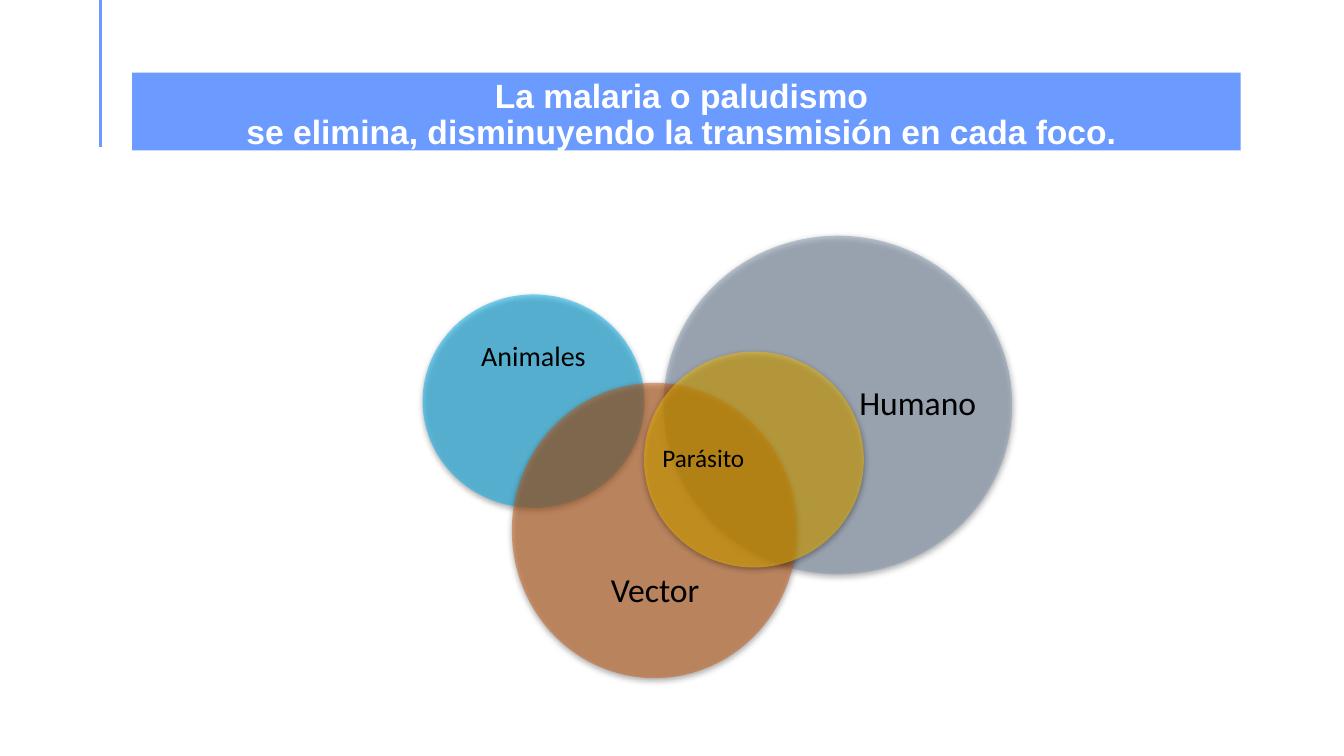
"""Build a slide with overlapping circles on malaria transmission."""
from lxml import etree
from pptx import Presentation
from pptx import util as u
from pptx.dml.color import RGBColor
from pptx.enum import shapes, text
from pptx.oxml.ns import qn

HUES = {"band": "6B9BFF", "white": "FFFFFF", "black": "000000", "sky": "00B0F0",
        "slate": "8497B0", "rust": "C55A11", "gold": "FFC000"}


def label(box, lines, size, font, hue, bold=False):
    """Add a centred text box whose lines share one paragraph."""
    frame = slide.shapes.add_textbox(*map(u.Cm, box)).text_frame
    frame.word_wrap = True
    frame.vertical_anchor = text.MSO_ANCHOR.MIDDLE
    para = frame.paragraphs[0]
    para.text = "\v".join(lines)
    para.alignment = text.PP_ALIGN.CENTER
    para.line_spacing = 0.9
    para.font.size = u.Pt(size)
    para.font.name = font
    para.font.bold = bold
    para.font.color.rgb = RGBColor.from_string(HUES[hue])
    return frame


def solid(shape, hue):
    """Fill a shape with one colour, without line or shadow."""
    shape.fill.solid()
    shape.fill.fore_color.rgb = RGBColor.from_string(HUES[hue])
    shape.line.fill.background()
    shape.shadow.inherit = False


deck = Presentation()
deck.slide_width, deck.slide_height = u.Cm(33.87), u.Cm(19.05)
slide = deck.slides.add_slide(deck.slide_layouts[6])
kinds = shapes.MSO_SHAPE

band = slide.shapes.add_shape(kinds.RECTANGLE, *map(u.Cm, (3.33, 1.83, 27.94, 1.96)))
solid(band, "band")

rule = slide.shapes.add_connector(
    shapes.MSO_CONNECTOR.STRAIGHT, *map(u.Cm, (2.54, 0, 2.54, 3.71)))
rule.line.color.rgb = RGBColor.from_string(HUES["band"])
rule.line.width = u.Pt(2.25)
etree.SubElement(rule._element.spPr, qn("a:effectLst"))

circles = [
    ("Animales", 20, "sky", kinds.OVAL, (10.65, 7.42, 5.59, 5.38), (11.3, 8.15, 4.29, 1.7)),
    ("Humano", 24, "slate", kinds.OVAL, (16.72, 5.94, 8.79, 8.53), (21.44, 6.93, 3.38, 6.55)),
    ("Vector", 24, "rust", kinds.FLOWCHART_OR, (12.9, 9.65, 7.19, 7.44),
     (13.74, 13.74, 5.54, 2.36)),
    ("Parásito", 18, "gold", kinds.OVAL, (16.23, 8.86, 5.54, 5.44), (16.66, 9.5, 2.13, 4.17)),
]
for name, size, hue, kind, place, box in circles:
    disc = slide.shapes.add_shape(kind, *map(u.Cm, place))
    solid(disc, hue)
    props = disc._element.spPr
    tint = props.find(qn("a:solidFill")).find(qn("a:srgbClr"))
    etree.SubElement(tint, qn("a:alpha"), val="50000")
    shade = etree.SubElement(
        props.find(qn("a:effectLst")), qn("a:outerShdw"), blurRad=str(u.Pt(4.5)),
        dist=str(u.Pt(1.5)), dir="5400000", algn="ctr", rotWithShape="0")
    dark = etree.SubElement(shade, qn("a:srgbClr"), val=HUES["black"])
    etree.SubElement(dark, qn("a:alpha"), val="63000")
    frame = label(box, [name], size, "Calibri", "black")
    frame.margin_left = frame.margin_right = frame.margin_top = frame.margin_bottom = 0

label((3.33, 1.83, 27.69, 2.18),
      ["La malaria o paludismo", "se elimina, disminuyendo la transmisión en cada foco."],
      24, "Arial", "white", bold=True)

deck.save("out.pptx")
